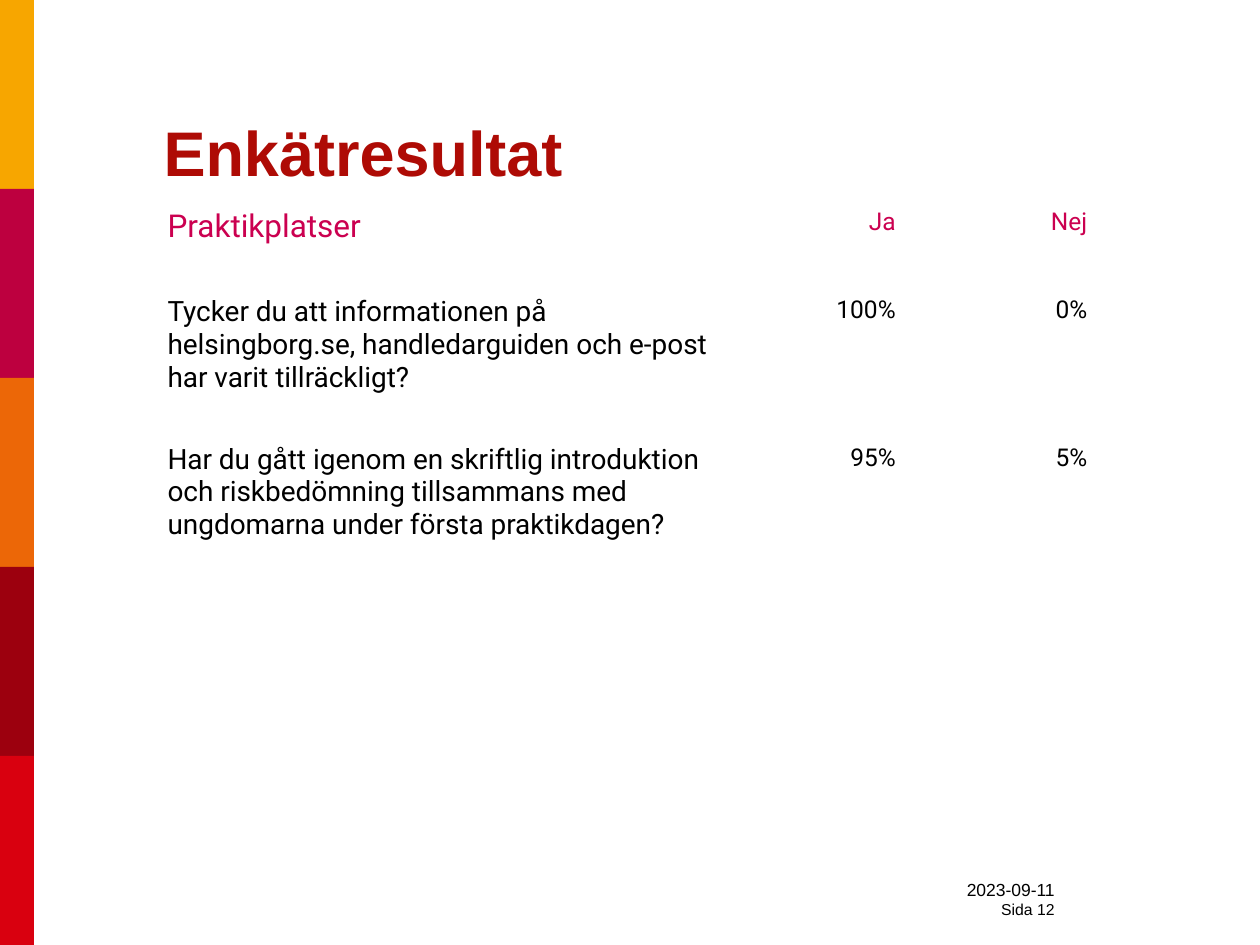
from pptx import Presentation
from pptx.dml.color import RGBColor
from pptx.enum.shapes import MSO_SHAPE
from pptx.enum.text import MSO_ANCHOR, PP_ALIGN
from pptx.util import Inches, Pt

COLORS = {
    "amber": "F7A600",
    "magenta": "BD003F",
    "orange": "EC6707",
    "burgundy": "9C000E",
    "red": "D9000F",
    "title": "AE0B05",
    "heading": "CB0050",
    "text": "000000",
}
STRIPES = ["amber", "magenta", "orange", "burgundy", "red"]
COLUMN_WIDTHS = [4.42, 1.36, 1.52]
HEADER_HEIGHT, QUESTION_HEIGHT, SPACER_HEIGHT = 0.7, 0.77, 0.37
HEADER = ["Praktikplatser", "Ja", "Nej"]
QUESTIONS = [
    ["Tycker du att informationen på helsingborg.se, handledarguiden och e-post "
     "har varit tillräckligt?", "100%", "0%"],
    ["Har du gått igenom en skriftlig introduktion och riskbedömning tillsammans med "
     "ungdomarna under första praktikdagen?", "95%", "5%"],
]


def rgb(name):
    return RGBColor.from_string(COLORS[name])


def write(paragraph, text, size, color="text", font="Arial", bold=False, align=PP_ALIGN.LEFT):
    paragraph.alignment = align
    run = paragraph.add_run()
    run.text = text
    run.font.color.rgb = rgb(color)
    for name, value in {"name": font, "size": Pt(size), "bold": bold}.items():
        setattr(run.font, name, value)


def add_text_frame(slide, left, top, width, height, **formats):
    box = slide.shapes.add_textbox(Inches(left), Inches(top), Inches(width), Inches(height))
    for name, value in {"word_wrap": True, **formats}.items():
        setattr(box.text_frame, name, value)
    return box.text_frame


def add_stripes(slide, left, top, width, height):
    stripe_height = height / len(STRIPES)
    for index, color in enumerate(STRIPES):
        stripe = slide.shapes.add_shape(
            MSO_SHAPE.RECTANGLE, Inches(left), Inches(top + index * stripe_height),
            Inches(width), Inches(stripe_height))
        stripe.shadow.inherit = False
        stripe.fill.solid()
        stripe.fill.fore_color.rgb = rgb(color)
        stripe.line.fill.background()


def add_title(slide, left, top, width, height):
    frame = add_text_frame(slide, left, top, width, height, vertical_anchor=MSO_ANCHOR.BOTTOM)
    write(frame.paragraphs[0], "Enkätresultat", 36, "title", bold=True)


def add_results(slide, left, top):
    rows = [(HEADER_HEIGHT, HEADER, 18, "heading")]
    for question in QUESTIONS:
        rows.append((QUESTION_HEIGHT, question, 16, "text"))
        rows.append((SPACER_HEIGHT, [""] * len(HEADER), 16, "text"))
    table = slide.shapes.add_table(
        len(rows), len(COLUMN_WIDTHS), Inches(left), Inches(top),
        Inches(sum(COLUMN_WIDTHS)), Inches(sum(row[0] for row in rows))).table
    table.first_row = table.horz_banding = False
    for column, width in zip(table.columns, COLUMN_WIDTHS):
        column.width = Inches(width)
    for row, (height, texts, label_size, color) in zip(table.rows, rows):
        row.height = Inches(height)
        for index, (cell, text) in enumerate(zip(row.cells, texts)):
            cell.fill.background()
            for side in ("left", "right", "top", "bottom"):
                setattr(cell, f"margin_{side}", 0)
            if text:
                write(cell.text_frame.paragraphs[0], text, 14 if index else label_size, color,
                      "Roboto", align=PP_ALIGN.RIGHT if index else PP_ALIGN.LEFT)


def add_footer(slide, left, top, width, height):
    frame = add_text_frame(slide, left, top, width, height, margin_left=0, margin_right=0,
                           vertical_anchor=MSO_ANCHOR.MIDDLE)
    write(frame.paragraphs[0], "2023-09-11", 10, align=PP_ALIGN.RIGHT)
    write(frame.add_paragraph(), "Sida 12", 9, align=PP_ALIGN.RIGHT)


def main():
    presentation = Presentation()
    presentation.slide_width = Inches(10)
    presentation.slide_height = Inches(7.5)
    slide = presentation.slides.add_slide(presentation.slide_layouts[6])
    add_stripes(slide, 0, 0, 0.27, 7.5)
    add_title(slide, 1.2, 0.3, 8.65, 1.25)
    add_results(slide, 1.33, 1.65)
    add_footer(slide, 7.33, 6.95, 1.04, 0.37)
    presentation.save("out.pptx")


if __name__ == "__main__":
    main()
